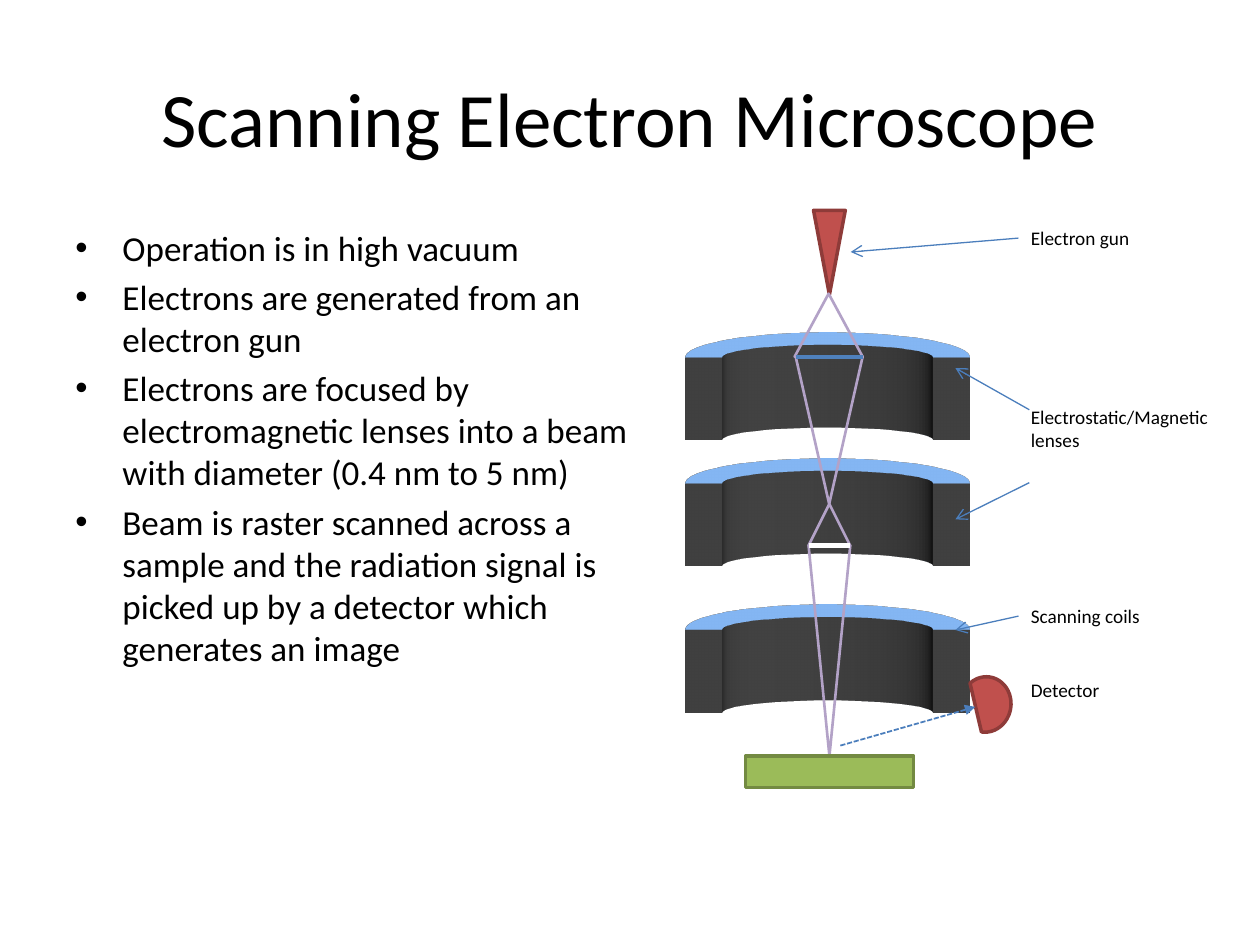
from lxml.etree import SubElement
from pptx import Presentation
from pptx.dml.color import RGBColor
from pptx.enum.dml import MSO_LINE
from pptx.enum.shapes import MSO_CONNECTOR, MSO_SHAPE
from pptx.enum.text import MSO_ANCHOR, PP_ALIGN
from pptx.oxml.ns import qn
from pptx.util import Cm, Pt

RED, RED_EDGE = "C0504D", "8E3B39"
GREEN, GREEN_EDGE = "9BBB59", "738A42"
BLUE, BLUE_EDGE = "4F81BD", "3A5F8C"
BEAM, POINTER, WHITE, WALL = "B3A2C7", "4B7EBC", "FFFFFF", "808080"

BULLETS = [
    "Operation is in high vacuum",
    "Electrons are generated from an electron gun",
    "Electrons are focused by electromagnetic lenses into a beam "
    "with diameter (0.4 nm to 5 nm)",
    "Beam is raster scanned across a sample and the radiation signal is "
    "picked up by a detector which generates an image",
]
RING_TOPS = [11.22, 8.26, 5.72]
BEAM_CONES = [  # left, top, width, height, rotation
    (16.02, 5.92, 1.37, 1.27, 0),
    (16.04, 7.19, 1.35, 2.97, 180),
    (16.3, 10.16, 0.84, 0.84, 0),
    (16.3, 11, 0.84, 4.24, 180),
]
LABELS = [  # text, top, width, height, wrap
    ("Electron gun", 4.44, 2.5, 0.74, False),
    ("Electrostatic/Magnetic lenses", 8.05, 4.45, 1.19, True),
    ("Scanning coils", 12.06, 2.72, 0.74, False),
    ("Detector", 13.54, 1.9, 0.74, False),
]
POINTERS = [  # start, end
    ((20.53, 4.8), (17.15, 5.08)),
    ((20.75, 8.26), (19.26, 7.42)),
    ((20.75, 9.73), (19.26, 10.47)),
    ((20.53, 12.42), (19.26, 12.7)),
]


def color(value):
    return RGBColor.from_string(value)


def apply(target, values):
    for name, value in values.items():
        setattr(target, name, value)


class SlideBuilder:
    font = "Calibri"
    text_color = "000000"

    def __init__(self, page):
        self.shapes = page.shapes

    def text(self, frame, paragraphs, size, wrap=True, bullet=False,
             anchor=MSO_ANCHOR.TOP, **formats):
        box = self.shapes.add_textbox(*map(Cm, frame))
        body = box.text_frame
        apply(body, {"word_wrap": wrap, "vertical_anchor": anchor})
        for index, content in enumerate(paragraphs):
            para = body.paragraphs[0] if index == 0 else body.add_paragraph()
            apply(para, formats)
            span = para.add_run()
            span.text = content
            apply(span.font, {"name": self.font, "size": Pt(size)})
            span.font.color.rgb = color(self.text_color)
            if bullet:
                self.bullet(para)

    def bullet(self, para):
        """Hang a bullet and put a fifth of a line before the paragraph."""
        properties = para._p.get_or_add_pPr()
        apply_indent = {"marL": Cm(0.95), "indent": Cm(-0.95)}
        for name, value in apply_indent.items():
            properties.set(name, str(value))
        before = SubElement(properties, qn("a:spcBef"))
        SubElement(before, qn("a:spcPct"), val="20000")
        SubElement(properties, qn("a:buFont"), typeface="Arial")
        SubElement(properties, qn("a:buChar"), char="•")

    def shape(self, kind, frame, edge, fill=None, width=2, rotation=0):
        shape = self.shapes.add_shape(kind, *map(Cm, frame))
        shape.rotation = rotation
        shape.shadow.inherit = False
        if fill:
            shape.fill.solid()
            shape.fill.fore_color.rgb = color(fill)
        else:
            shape.fill.background()
        shape.line.color.rgb = color(edge)
        shape.line.width = Pt(width)
        return shape

    def ring(self, top):
        """A half ring, tilted back by 70 degrees and extruded downwards."""
        arc = self.shape(MSO_SHAPE.BLOCK_ARC, (13.82, top, 5.72, 2.97),
                         BLUE_EDGE, BLUE)
        properties = arc._element.spPr
        scene = SubElement(properties, qn("a:scene3d"))
        camera = SubElement(scene, qn("a:camera"), prst="orthographicFront")
        SubElement(camera, qn("a:rot"), lat=str(290 * 60000), lon="0", rev="0")
        SubElement(scene, qn("a:lightRig"), rig="threePt", dir="t")
        solid = SubElement(properties, qn("a:sp3d"), extrusionH=str(Pt(50)))
        side = SubElement(solid, qn("a:extrusionClr"))
        SubElement(side, qn("a:srgbClr"), val=WALL)

    def line(self, start, end, stroke, width, head=None, dash=None):
        line = self.shapes.add_connector(
            MSO_CONNECTOR.STRAIGHT, *map(Cm, (*start, *end)))
        line.line.color.rgb = color(stroke)
        apply(line.line, {"width": Pt(width), "dash_style": dash})
        if head:
            SubElement(line.line._get_or_add_ln(), qn("a:tailEnd"), type=head)
        SubElement(line._element.spPr, qn("a:effectLst"))


def main():
    deck = Presentation()
    apply(deck, {"slide_width": Cm(25.4), "slide_height": Cm(19.05)})
    slide = SlideBuilder(deck.slides.add_slide(deck.slide_layouts[6]))

    for top in RING_TOPS:
        slide.ring(top)
    slide.text((1.27, 0.76, 22.86, 3.18), ["Scanning Electron Microscope"], 44,
               anchor=MSO_ANCHOR.MIDDLE, alignment=PP_ALIGN.CENTER)
    slide.text((1.27, 4.45, 12.5, 12.57), BULLETS, 20, bullet=True)

    triangle = MSO_SHAPE.ISOSCELES_TRIANGLE
    slide.shape(triangle, (16.4, 4.24, 0.64, 1.7), RED_EDGE, RED, rotation=180)
    for *frame, rotation in BEAM_CONES:
        slide.shape(triangle, frame, BEAM, width=1.5, rotation=rotation)
    slide.line((16.3, 11), (17.14, 11), WHITE, 3)
    for stroke, width in ((WHITE, 0.75), (BLUE, 2.25)):
        slide.line((16.04, 7.2), (17.39, 7.2), stroke, width)

    slide.shape(MSO_SHAPE.RECTANGLE, (15.03, 15.24, 3.39, 0.64),
                GREEN_EDGE, GREEN)
    slide.shape(MSO_SHAPE.CHORD, (19.36, 13.64, 1.02, 1.12),
                RED_EDGE, RED, rotation=188.7)
    slide.line((16.94, 15.03), (19.66, 14.25), POINTER, 1, "triangle",
               MSO_LINE.SQUARE_DOT)

    for content, top, width, height, wrap in LABELS:
        slide.text((20.53, top, width, height), [content], 11, wrap)
    for start, end in POINTERS:
        slide.line(start, end, POINTER, 0.75, "arrow")
    deck.save("out.pptx")


if __name__ == "__main__":
    main()
